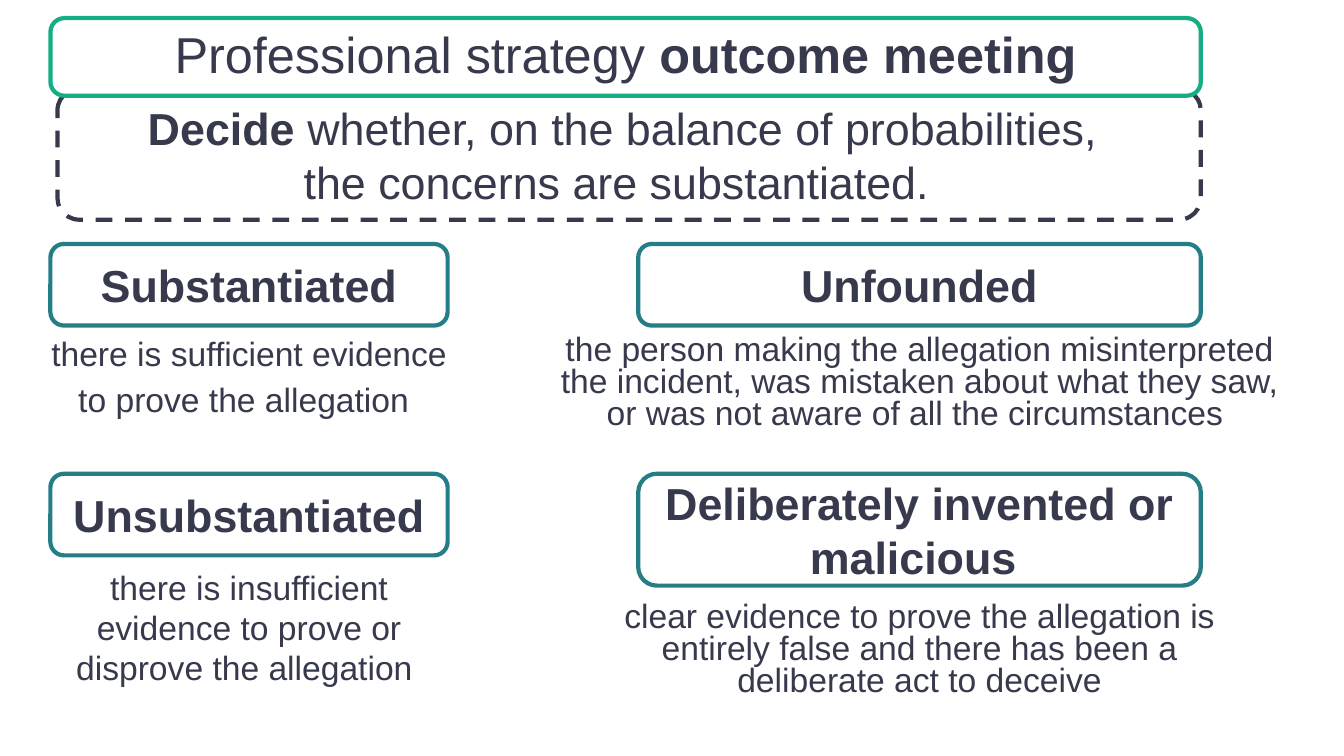
from pptx import Presentation
from pptx.dml.color import RGBColor
from pptx.enum.dml import MSO_LINE
from pptx.enum.shapes import MSO_SHAPE
from pptx.enum.text import MSO_ANCHOR, MSO_AUTO_SIZE, PP_ALIGN
from pptx.util import Inches, Pt

ROUNDED = MSO_SHAPE.ROUNDED_RECTANGLE
DASH = MSO_LINE.DASH
MIDDLE, BOTTOM, TOP = MSO_ANCHOR.MIDDLE, MSO_ANCHOR.BOTTOM, MSO_ANCHOR.TOP
CENTER = PP_ALIGN.CENTER
NO_AUTOFIT = MSO_AUTO_SIZE.NONE

INK, TEAL, GREEN, WHITE = "37394C", "257D86", "16AD85", "FFFFFF"
FONT = "Arial"

TITLE = [("Professional strategy ", 36, False), ("outcome meeting", 36, True)]
DECISION = [("Decide", 32, True),
            (" whether, on the balance of probabilities, ", 32, False),
            "break",
            ("the concerns are substantiated.  ", 32, False)]

LEFT, RIGHT_EDGE = 0.5, 11.91
TITLE_BOX = (LEFT, 0.18, RIGHT_EDGE - LEFT, 0.77)
DECISION_BOX = (0.57, 0.88, RIGHT_EDGE - 0.57, 1.3)
COLUMNS = [(LEFT, 3.94), (6.33, RIGHT_EDGE - 6.33)]
ROWS = [2.42, 4.7]
HEADING_HEIGHT = 0.81

OUTCOMES = [
    (0, 0, "Substantiated", HEADING_HEIGHT,
     [("there is sufficient evidence to prove the allegation", 24, False),
      (" ", 28, False)], (3.01, 4.42, 1.46)),
    (0, 1, "Unsubstantiated", HEADING_HEIGHT,
     [("there is insufficient evidence to prove or disprove the allegation ",
       24, False)], (5.49, 4.42, 1.46)),
    (1, 0, "Unfounded", HEADING_HEIGHT,
     [("the person making the allegation misinterpreted the incident, "
       "was mistaken about what they saw, or was not aware of all the "
       "circumstances ", 24, False)], (3.28, 7.54, 1.07)),
    (1, 1, "Deliberately invented or malicious ", 1.11,
     [("clear evidence to prove the allegation is entirely false and "
       "there has been a deliberate act to deceive", 24, False)],
     (5.93, 6.67, 1.07)),
]


def color(value):
    return RGBColor.from_string(value)


def write(shape, runs, anchor=MIDDLE, spacing=None):
    tf = shape.text_frame
    tf.word_wrap = True
    tf.auto_size = NO_AUTOFIT
    tf.vertical_anchor = anchor
    p = tf.paragraphs[0]
    p.alignment = CENTER
    if spacing:
        p.line_spacing = spacing
    for run in runs:
        if run == "break":
            p.add_line_break()
            continue
        text, size, bold = run
        r = p.add_run()
        r.text = text
        r.font.name = FONT
        r.font.size = Pt(size)
        r.font.bold = bold
        r.font.color.rgb = color(INK)
    return p


def add_box(s, box, line=None, fill=None):
    sp = s.shapes.add_shape(ROUNDED, *map(Inches, box))
    sp.shadow.inherit = False
    if fill:
        sp.fill.solid()
        sp.fill.fore_color.rgb = color(fill)
    else:
        sp.fill.background()
    if line:
        sp.line.color.rgb = color(line)
        sp.line.width = Pt(3)
    else:
        sp.line.fill.background()
    return sp


def add_title(s):
    frame = add_box(s, TITLE_BOX, GREEN, WHITE)
    frame.adjustments[0] = 0.18
    title = s.shapes.title
    title.left, title.top, title.width, title.height = map(Inches, TITLE_BOX)
    p = write(title, TITLE, spacing=0.9)
    p.space_after = Pt(6)
    frame._element.addnext(title._element)


def add_outcome(s, column, row, heading, height, runs, detail):
    left, width = COLUMNS[column]
    sp = add_box(s, (left, ROWS[row], width, height), TEAL)
    write(sp, [(heading, 32, True)])

    top, detail_width, detail_height = detail
    center = left + width / 2
    box = (center - detail_width / 2, top, detail_width, detail_height)
    if column == 0:
        write(add_box(s, box), runs)
    else:
        write(s.shapes.add_textbox(*map(Inches, box)), runs, TOP, 0.8)


def main():
    prs = Presentation()
    prs.slide_width, prs.slide_height = Inches(13.33), Inches(7.5)
    s = prs.slides.add_slide(prs.slide_layouts[5])
    decision = add_box(s, DECISION_BOX, INK, WHITE)
    decision.line.dash_style = DASH
    write(decision, DECISION, BOTTOM)
    add_title(s)
    for outcome in OUTCOMES:
        add_outcome(s, *outcome)
    prs.save("out.pptx")


if __name__ == "__main__":
    main()
